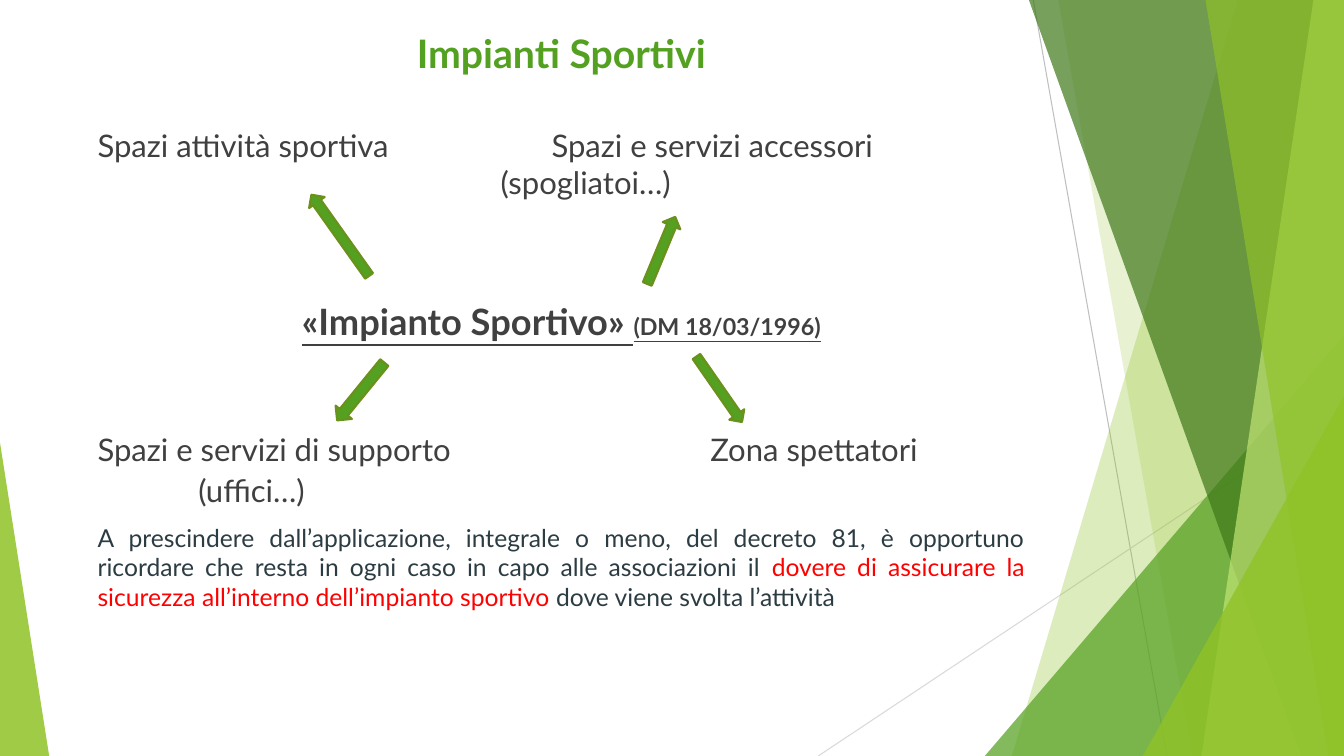
from pptx import Presentation
from pptx.dml.color import RGBColor
from pptx.enum.shapes import MSO_CONNECTOR as Link, MSO_SHAPE as Form
from pptx.enum.text import PP_ALIGN as Align
from pptx.oxml.ns import qn
from pptx.oxml.xmlchemy import OxmlElement as Node
from pptx.util import Cm, Pt


def hue(code):
    return RGBColor.from_string(code)


def paint(shape, code, alpha=100):
    shape.shadow.inherit = False
    shape.fill.solid()
    shape.fill.fore_color.rgb = hue(code)
    shape.line.fill.background()
    if alpha < 100:
        node = Node("a:alpha")
        node.set("val", str(alpha * 1000))
        shape.element.spPr.find(qn("a:solidFill"))[0].append(node)


WIDE, HIGH = 33.87, 19.05
LIME, GREEN, DARK, SLATE = "90C226", "54A021", "404040", "2C3C43"

deck = Presentation()
deck.slide_width, deck.slide_height = Cm(WIDE), Cm(HIGH)
slide = deck.slides.add_slide(deck.slide_layouts[6])
shapes = slide.shapes

rays = [(26.04, 0, 29.41, HIGH, "BFBFBF"), (WIDE, 10.24, 20.62, HIGH, "D9D9D9")]
for x1, y1, x2, y2, code in rays:
    ray = shapes.add_connector(Link.STRAIGHT, Cm(x1), Cm(y1), Cm(x2), Cm(y2))
    ray.line.color.rgb = hue(code)
    ray.line.width = Pt(0.75)
    ray.element.spPr.append(Node("a:effectLst"))

bands = [
    ("band", 31.19, 25.5, LIME, 30),
    ("band", 26.67, 30.05, LIME, 20),
    ("wedge", 24.82, 8.46, GREEN, 72),
    ("band", 25.93, 32.79, "3F7819", 70),
    ("band", 33.1, 30.28, "C0E474", 70),
    ("band", 30.38, 33.48, LIME, 65),
    ("wedge", 28.8, 9.98, LIME, 80),
]
for kind, a, b, code, alpha in bands:
    if kind == "band":
        pen = shapes.build_freeform(a * 100, 0, scale=Cm(0.01))
        pen.add_line_segments(
            [(WIDE * 100, 0), (WIDE * 100, HIGH * 100), (b * 100, HIGH * 100)]
        )
        part = pen.convert_to_shape()
    else:
        part = shapes.add_shape(
            Form.ISOSCELES_TRIANGLE, Cm(a), Cm(b), Cm(WIDE - a), Cm(HIGH - b)
        )
        part.adjustments[0] = 1
    paint(part, code, alpha)

edge = shapes.add_shape(Form.ISOSCELES_TRIANGLE, 0, Cm(11.15), Cm(1.24), Cm(7.9))
edge.adjustments[0] = 0
paint(edge, LIME, 85)

LEFT, SPAN = 2.46, 23.37
boxes = [
    (LEFT, 0.74, SPAN, 1.2, Align.CENTER,
     [(0, [("Impianti Sportivi", 28, GREEN, True, False)])]),
    (LEFT, 3.18, 9, 1, Align.LEFT,
     [(0, [("Spazi attività sportiva", 22.2, DARK, False, False)])]),
    (12.62, 3.18, 12, 2, Align.LEFT,
     [(1.28, [("Spazi e servizi accessori", 22.2, DARK, False, False)]),
      (0, [("(spogliatoi…)", 22.2, DARK, False, False)])]),
    (LEFT, 7.54, SPAN, 1.2, Align.CENTER,
     [(0, [("«Impianto Sportivo» ", 25.9, DARK, True, True),
           ("(DM 18/03/1996)", 16.6, DARK, True, True)])]),
    (LEFT, 10.85, 11, 2, Align.LEFT,
     [(0, [("Spazi e servizi di supporto", 22.2, DARK, False, False)]),
      (2.54, [("(uffici…)", 22.2, DARK, False, False)])]),
    (17.9, 10.85, 7, 1, Align.LEFT,
     [(0, [("Zona spettatori", 22.2, DARK, False, False)])]),
    (LEFT, 13.17, SPAN, 2.3, Align.JUSTIFY,
     [(0, [("A prescindere dall’applicazione, integrale o meno, del decreto 81, "
            "è opportuno ricordare che resta in ogni caso in capo alle "
            "associazioni il ", 17.6, SLATE, False, False),
           ("dovere di assicurare la sicurezza all’interno dell’impianto sportivo",
            17.6, "FF0000", False, False),
           (" dove viene svolta l’attività", 17.6, SLATE, False, False)])]),
]
for x, y, w, h, align, lines in boxes:
    frame = shapes.add_textbox(Cm(x), Cm(y), Cm(w), Cm(h)).text_frame
    frame.word_wrap = True
    frame.margin_left = frame.margin_right = 0
    frame.margin_top = frame.margin_bottom = 0
    for i, (dent, runs) in enumerate(lines):
        para = frame.add_paragraph() if i else frame.paragraphs[0]
        para.alignment = align
        if dent:
            para._p.get_or_add_pPr().set("marL", str(Cm(dent)))
            if i:
                para.space_before = Pt(2.5)
        for text, size, code, bold, under in runs:
            run = para.add_run()
            run.text = text
            font = run.font
            font.name, font.size = "Lato", Pt(size)
            font.bold, font.underline = bold, under
            font.color.rgb = hue(code)

arrows = [
    (15.75, 6.07, 1.83, 0.48, 292.6),
    (17.12, 9.58, 2.01, 0.46, 55.2),
    (7.32, 5.69, 2.51, 0.48, 234.6),
    (8.15, 9.6, 1.88, 0.53, 129.2),
]
for x, y, w, h, turn in arrows:
    arrow = shapes.add_shape(Form.RIGHT_ARROW, Cm(x), Cm(y), Cm(w), Cm(h))
    arrow.rotation = turn
    paint(arrow, GREEN)
    arrow.line.color.rgb = hue("6B901C")
    arrow.line.width = Pt(1.5)

deck.save("out.pptx")
